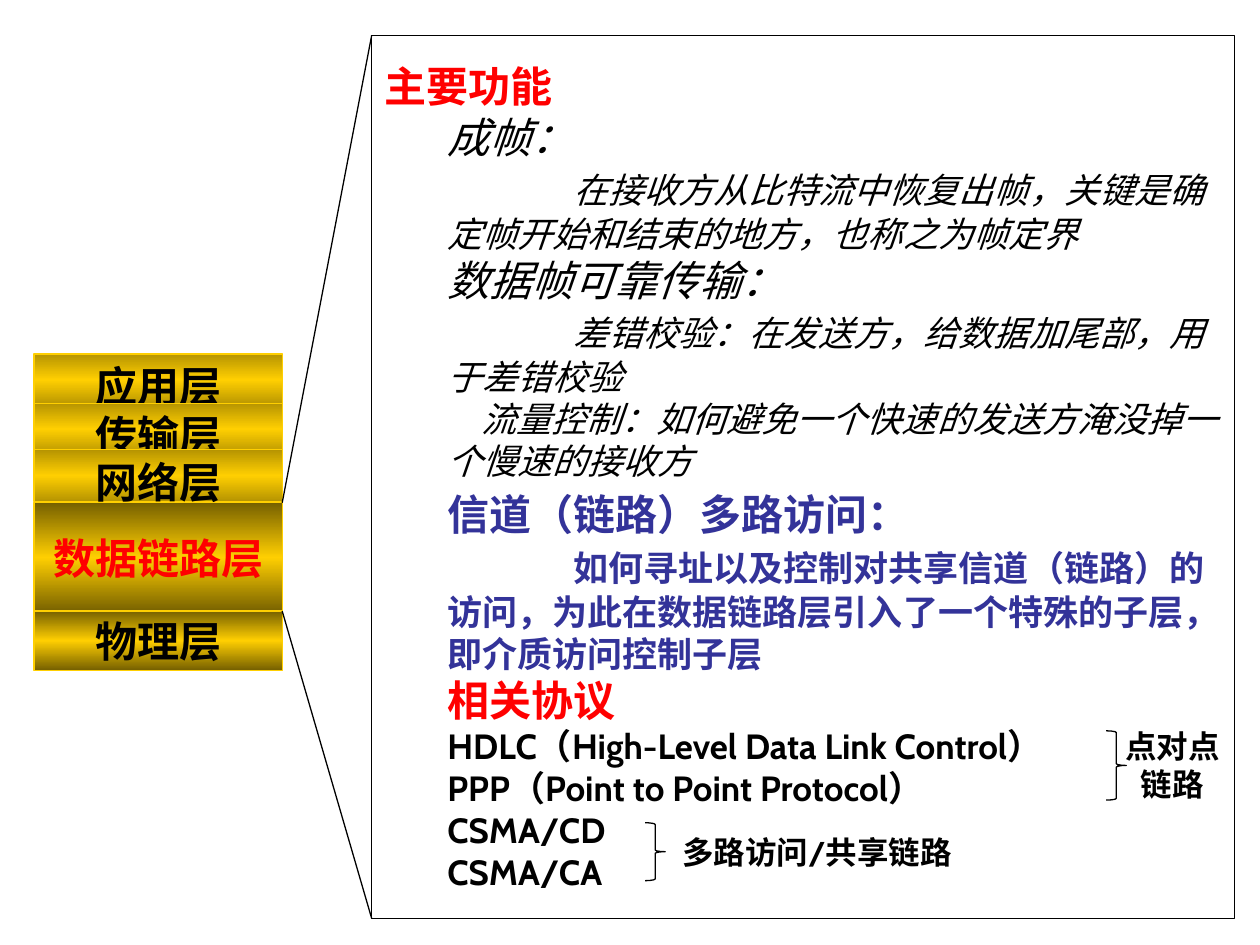
from copy import deepcopy
from dataclasses import dataclass

from pptx import Presentation
from pptx.dml.color import RGBColor
from pptx.enum.shapes import MSO_CONNECTOR, MSO_SHAPE
from pptx.enum.text import MSO_ANCHOR, MSO_AUTO_SIZE, PP_ALIGN
from pptx.oxml.ns import qn
from pptx.oxml.xmlchemy import OxmlElement
from pptx.util import Inches, Pt


@dataclass(frozen=True)
class Theme:
    font: str = "Cabin"
    black: str = "000000"
    red: str = "FF0000"
    blue: str = "333399"
    gold: str = "FFCF01"
    amber: str = "B69401"
    brown: str = "766000"
    large: int = 28
    head: int = 24
    body: int = 20
    note: int = 18
    line: float = 0.75


class Deck:
    """Style and current slide; lengths are cells of a 100 x 75 grid."""

    def __init__(self, theme):
        self.t = theme
        self.prs = Presentation()
        self.prs.slide_width, self.prs.slide_height = Inches(10), Inches(7.5)
        self.s = self.prs.slides.add_slide(self.prs.slide_layouts[1])
        title = self.s.shapes.title._element
        title.getparent().remove(title)

    def grid(self, *cells):
        return [round(c * self.prs.slide_width / 100) for c in cells]

    def outline(self, sp, color):
        sp.line.color.rgb = RGBColor.from_string(color)
        sp.line.width = Pt(self.t.line)

    def run(self, p, text, size, color, bold=True, italic=False):
        r = p.add_run()
        r.text = text
        values = {"name": self.t.font, "size": Pt(size), "bold": bold, "italic": italic}
        for name, value in values.items():
            setattr(r.font, name, value)
        r.font.color.rgb = RGBColor.from_string(color)

    def frame(self, sp, **values):
        tf = sp.text_frame
        for name, value in {"word_wrap": True, **values}.items():
            setattr(tf, name, value)
        return tf

    def layer(self, box, text, edge, color, **values):
        sp = self.s.shapes.add_shape(MSO_SHAPE.RECTANGLE, *self.grid(*box))
        sp.shadow.inherit = False
        self.outline(sp, self.t.gold)
        # Three-stop gradient: edge, gold, edge
        sp.fill.gradient()
        sp.fill.gradient_angle = 90
        for stop, rgb, pos in zip(sp.fill.gradient_stops, (edge, self.t.gold), (0, 0.5)):
            stop.color.rgb = RGBColor.from_string(rgb)
            stop.position = pos
        first = sp._element.spPr.find(".//" + qn("a:gs"))
        last = deepcopy(first)
        last.set("pos", "100000")
        first.getparent().append(last)
        p = self.frame(sp, **values).paragraphs[0]
        p.alignment = PP_ALIGN.CENTER
        self.run(p, text, self.t.head, color)

    def panel(self, box, paragraphs):
        sp = self.s.placeholders[1]
        sp.left, sp.top, sp.width, sp.height = self.grid(*box)
        self.outline(sp, self.t.black)
        tf = self.frame(sp, vertical_anchor=MSO_ANCHOR.MIDDLE,
                        auto_size=MSO_AUTO_SIZE.NONE)
        for i, (margin, indent, runs) in enumerate(paragraphs):
            p = tf.paragraphs[0] if i == 0 else tf.add_paragraph()
            p.space_before = Pt(0)
            pPr = p._p.get_or_add_pPr()
            for name, inches in {"marL": margin, "indent": indent, "defTabSz": 1}.items():
                pPr.set(name, str(Inches(inches)))
            pPr.append(OxmlElement("a:buNone"))
            for run in runs:
                self.run(p, *run)

    def connector(self, *ends):
        sp = self.s.shapes.add_connector(MSO_CONNECTOR.STRAIGHT, *self.grid(*ends))
        self.outline(sp, self.t.black)
        sp._element.spPr.append(OxmlElement("a:effectLst"))

    def brace(self, box):
        sp = self.s.shapes.add_shape(MSO_SHAPE.RIGHT_BRACE, *self.grid(*box))
        sp.shadow.inherit = False
        sp.fill.background()
        self.outline(sp, self.t.black)

    def note(self, box, *lines):
        sp = self.s.shapes.add_textbox(*self.grid(*box))
        p = self.frame(sp, auto_size=MSO_AUTO_SIZE.SHAPE_TO_FIT_TEXT).paragraphs[0]
        p.alignment = PP_ALIGN.CENTER
        for i, line in enumerate(lines):
            if i:
                p.add_line_break()
            self.run(p, line, self.t.note, self.t.black)


def main():
    t = Theme()
    deck = Deck(t)

    # Functions and protocols of the data link layer
    def heading(text, color, bold=True, margin=0.5):
        return margin, 0, [(text, t.head, color, bold, not bold)]

    def detail(text, color=t.black, bold=False):
        return 0.5, 0, [("\t", t.head, color, bold, not bold),
                        (text, t.body, color, bold, not bold)]

    protocols = ["HDLC（High-Level Data Link Control）",
                 "PPP（Point to Point Protocol）", "CSMA/CD", "CSMA/CA"]
    deck.panel((29.5, 2.8, 68.5, 70.1), [
        heading("主要功能", t.red, margin=0),
        heading("成帧：", t.black, False),
        detail("在接收方从比特流中恢复出帧，关键是确定帧开始和结束的地方，也称之为帧定界"),
        heading("数据帧可靠传输：", t.black, False),
        detail("差错校验：在发送方，给数据加尾部，用于差错校验"),
        (0.5, 0.27, [("流量控制：如何避免一个快速的发送方淹没掉一个慢速的接收方",
                      t.body, t.black, False, True)]),
        (0.5, 0, [("信道（链路）多路访问：", t.head, t.blue), ("\t", t.large, t.blue)]),
        detail("如何寻址以及控制对共享信道（链路）的访问，为此在数据链路层引入了"
               "一个特殊的子层，即介质访问控制子层", t.blue, True),
        heading("相关协议", t.red),
        *[(0.5, 0, [(name, t.body, t.black)]) for name in protocols],
    ])

    # Layer stack
    upper = {"vertical_anchor": MSO_ANCHOR.TOP,
             "auto_size": MSO_AUTO_SIZE.SHAPE_TO_FIT_TEXT}
    lower = {"vertical_anchor": MSO_ANCHOR.MIDDLE}
    for text, top, height, edge, color, values in [
        ("应用层", 28.1, 4.1, t.amber, t.black, upper),
        ("传输层", 32, 4.1, t.amber, t.black, upper),
        ("网络层", 35.7, 4.1, t.amber, t.black, upper),
        ("数据链路层", 39.9, 8.7, t.brown, t.red, lower),
        ("物理层", 48.5, 4.7, t.brown, t.black, lower),
    ]:
        deck.layer((2.7, top, 19.7, height), text, edge, color, **values)

    # Zoom lines from the data link layer to the panel
    deck.connector(22.4, 39.9, 29.5, 2.8)
    deck.connector(22.4, 48.5, 29.5, 72.9)

    # Protocol groups
    deck.brace((87.8, 58, 1.6, 5.5))
    deck.brace((51.2, 65.3, 1.6, 4.6))
    deck.note((87.9, 57.2, 10.3, 7.1), "点对点", "链路")
    deck.note((51.2, 65.6, 27.3, 4), "多路访问/共享链路")

    deck.prs.save("out.pptx")


if __name__ == "__main__":
    main()
